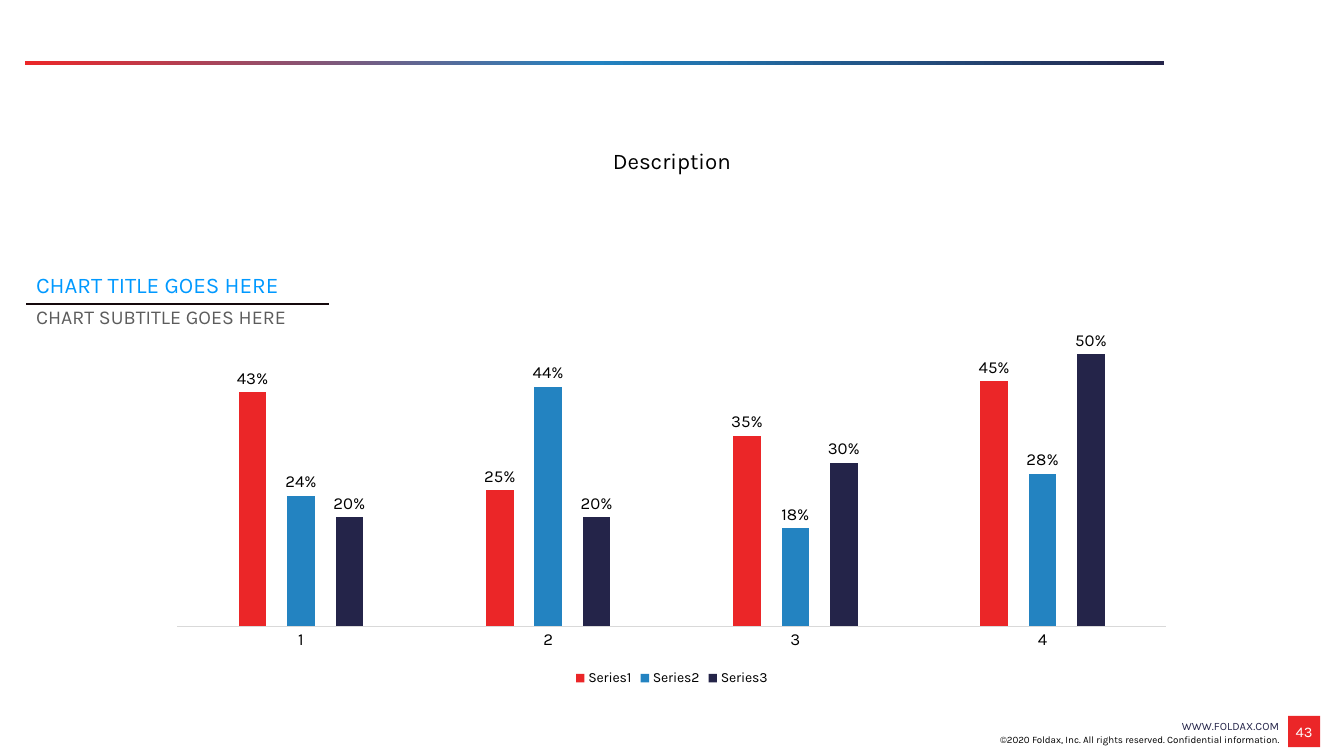
from copy import deepcopy
from lxml import etree
from pptx import Presentation
from pptx.chart.data import CategoryChartData
from pptx.dml.color import RGBColor
from pptx.enum import chart as kinds, shapes, text
from pptx.oxml import ns
from pptx.util import Pt

FONT = "Karla"
HUES = {"red": "EB2628", "blue": "2383C1", "navy": "242449", "black": "000000", "white": "FFFFFF",
        "sky": "0099FF", "gray": "5C5C5C", "rule": "14080C", "axis": "D9D9D9"}
ALIGN = {"l": text.PP_ALIGN.LEFT, "c": text.PP_ALIGN.CENTER, "r": text.PP_ALIGN.RIGHT}
ANCHOR = {"t": text.MSO_ANCHOR.TOP, "m": text.MSO_ANCHOR.MIDDLE, "b": text.MSO_ANCHOR.BOTTOM}
NOTES = [
    ("WWW.FOLDAX.COM", (752.4, 506.5, 168.5, 24.5), 8, "navy", "r", "m"),
    ("©2020 Foldax, Inc. All rights reserved. Confidential information.",
     (596.9, 507.2, 324, 28.8), 7, "black", "r", "b"),
    ("CHART TITLE GOES HERE", (18.7, 190.1, 216, 26.6), 16, "sky", "l", "t"),
    ("CHART SUBTITLE GOES HERE", (18.7, 214, 216, 24.5), 14, "gray", "l", "t"),
    ("Description", (104.1, 101.5, 751.7, 26.6), 16, "black", "c", "m"),
]
BAND = (18, 43.7, 813.6, 2.9)
BADGE = ("43", (920, 511.4, 23, 22.3))
RULE = (18.7, 217.4, 234.7, 217.4)
PLOT = (112, 208.5, 735.8, 284.4)
INNER = {"x": 0.02, "y": 0.02, "w": 0.96, "h": 0.82}
CATS = ["1", "2", "3", "4"]
DATA = [
    ("Series1", "red", (0.43, 0.25, 0.35, 0.45)),
    ("Series2", "blue", (0.24, 0.44, 0.18, 0.28)),
    ("Series3", "navy", (0.2, 0.2, 0.3, 0.5)),
]


def rgb(hue):
    return RGBColor.from_string(HUES[hue])


def pts(box):
    return [Pt(n) for n in box]


def put(item, **vals):
    for key, val in vals.items():
        setattr(item, key, val)


def style(font, size, hue):
    put(font, name=FONT, size=Pt(size))
    font.color.rgb = rgb(hue)


def write(frame, words, size, hue, align, anchor):
    put(frame, word_wrap=True, vertical_anchor=ANCHOR[anchor])
    par = frame.paragraphs[0]
    par.alignment = ALIGN[align]
    run = par.add_run()
    run.text = words
    style(run.font, size, hue)


def block(slide, box):
    shape = slide.shapes.add_shape(shapes.MSO_SHAPE.RECTANGLE, *pts(box))
    shape.shadow.inherit = False
    shape.line.fill.background()
    return shape


def add_band(slide):
    band = block(slide, BAND)
    band.fill.gradient()
    band.fill.gradient_angle = 0
    stops = band.element.xpath(".//a:gsLst")[0]
    stops.append(deepcopy(stops[0]))
    for k, (stop, hue) in enumerate(zip(band.fill.gradient_stops, ("red", "blue", "navy"))):
        stop.color.rgb = rgb(hue)
        stop.position = k / 2


def add_badge(slide):
    words, box = BADGE
    badge = block(slide, box)
    badge.fill.solid()
    badge.fill.fore_color.rgb = rgb("red")
    frame = badge.text_frame
    for side in ("left", "right", "top", "bottom"):
        setattr(frame, "margin_" + side, Pt(1.4))
    write(frame, words, 10.5, "white", "c", "m")


def add_rule(slide):
    rule = slide.shapes.add_connector(shapes.MSO_CONNECTOR.STRAIGHT, *pts(RULE))
    rule.line.width = Pt(1.5)
    rule.line.color.rgb = rgb("rule")
    etree.SubElement(rule.element.spPr, ns.qn("a:effectLst"))


def add_bars(slide):
    data = CategoryChartData(number_format="0%")
    data.categories = CATS
    for name, hue, vals in DATA:
        data.add_series(name, vals)
    chart = slide.shapes.add_chart(kinds.XL_CHART_TYPE.COLUMN_CLUSTERED, *pts(PLOT), data).chart
    put(chart, has_title=False, has_legend=True)
    style(chart.font, 10, "black")
    put(chart.legend, position=kinds.XL_LEGEND_POSITION.BOTTOM, include_in_layout=False)
    style(chart.legend.font, 10, "black")
    none = kinds.XL_TICK_MARK.NONE
    put(chart.value_axis, visible=False, has_major_gridlines=False,
        minimum_scale=0, maximum_scale=0.6)
    axis = chart.category_axis
    put(axis, major_tick_mark=none, minor_tick_mark=none)
    style(axis.tick_labels.font, 12, "black")
    axis.format.line.width = Pt(0.75)
    axis.format.line.color.rgb = rgb("axis")
    plot = chart.plots[0]
    put(plot, gap_width=444, overlap=-75, vary_by_categories=False)
    for bars, (name, hue, vals) in zip(plot.series, DATA):
        bars.format.fill.solid()
        bars.format.fill.fore_color.rgb = rgb(hue)
        put(bars.data_labels, show_value=True, number_format="0%", number_format_is_linked=False,
            position=kinds.XL_LABEL_POSITION.OUTSIDE_END)
        style(bars.data_labels.font, 12, "black")
    area = chart.element.xpath(".//c:plotArea")[0]
    for old in area.findall(ns.qn("c:layout")):
        area.remove(old)
    layout = etree.Element(ns.qn("c:layout"))
    area.insert(0, layout)
    manual = etree.SubElement(layout, ns.qn("c:manualLayout"))
    rules = {"layoutTarget": "inner", "xMode": "edge", "yMode": "edge", **INNER}
    for tag, val in rules.items():
        etree.SubElement(manual, ns.qn("c:" + tag)).set("val", str(val))


def main():
    deck = Presentation()
    put(deck, slide_width=Pt(960), slide_height=Pt(540))
    slide = deck.slides.add_slide(deck.slide_layouts[6])
    add_band(slide)
    add_badge(slide)
    add_bars(slide)
    add_rule(slide)
    for words, box, *look in NOTES:
        write(slide.shapes.add_textbox(*pts(box)).text_frame, words, *look)
    deck.save("out.pptx")


if __name__ == "__main__":
    main()
